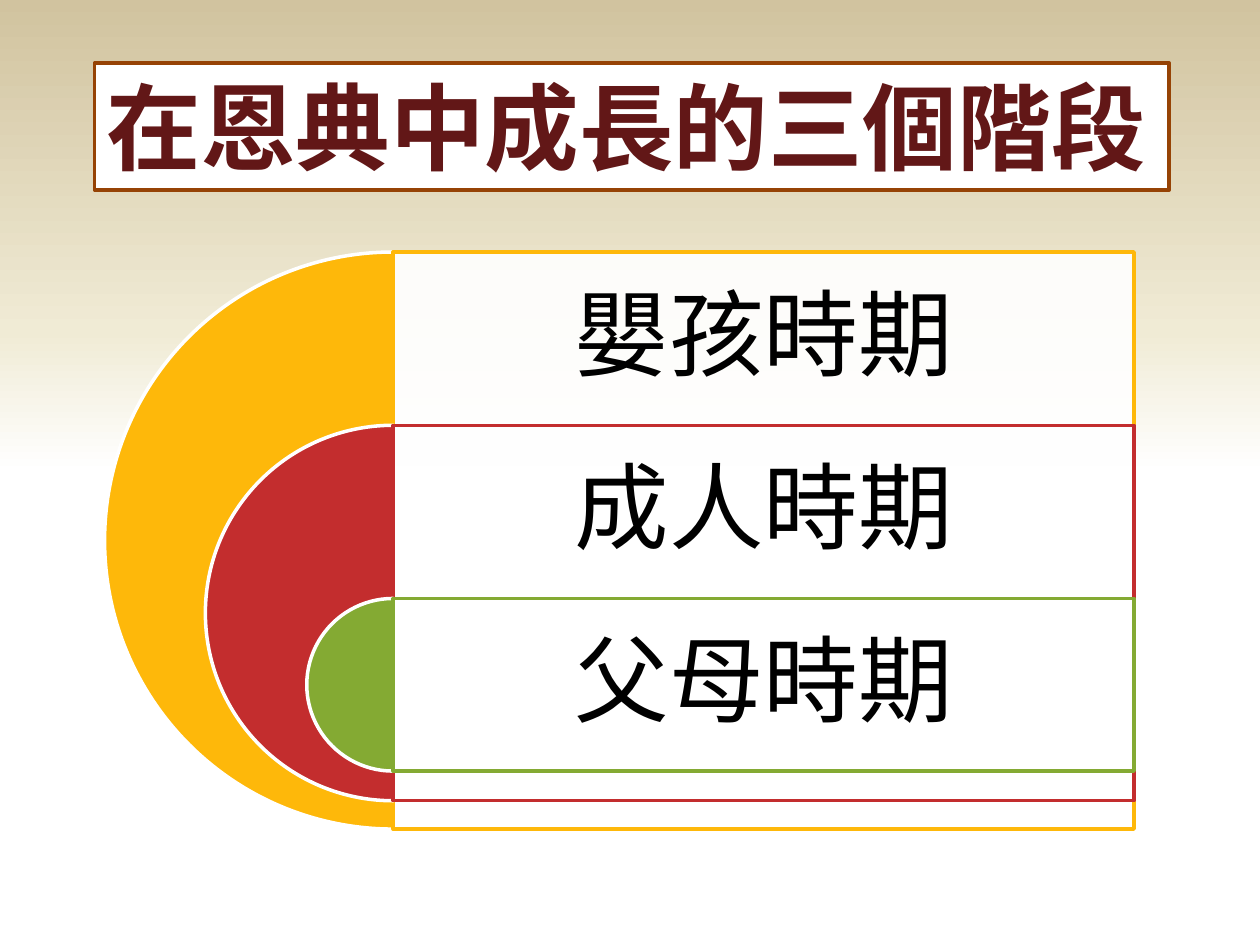
from copy import deepcopy

from lxml import etree
from pptx import Presentation
from pptx.dml.color import RGBColor
from pptx.enum.shapes import MSO_SHAPE
from pptx.enum.text import MSO_ANCHOR, MSO_AUTO_SIZE, PP_ALIGN
from pptx.oxml.ns import qn
from pptx.util import Inches, Pt

RECTANGLE = MSO_SHAPE.RECTANGLE
PIE = MSO_SHAPE.PIE
MIDDLE = MSO_ANCHOR.MIDDLE
CENTER = PP_ALIGN.CENTER
GROW = MSO_AUTO_SIZE.SHAPE_TO_FIT_TEXT

STAGES = [
    ("嬰孩時期", "FEB80A", 4.58),
    ("成人時期", "C32D2E", 2.98),
    ("父母時期", "84AA33", 1.37),
]
BACKGROUND_STOPS = [(0.5, "FFFFFF"), (0.65, "F0EBD5"), (1, "D1C39F")]
AXIS = 3.12
TOP = 2
ROW_HEIGHT = 1.375
PANEL_WIDTH = 5.88


def color(value):
    return RGBColor.from_string(value)


class SlideBuilder:
    latin_font = "Roboto"
    asian_font = "Noto Sans CJK SC"
    text_size = 54
    line_width = 2

    def __init__(self, page):
        self.page = page

    def background(self, stops):
        fill = self.page.background.fill
        fill.gradient()
        fill.gradient_angle = 90
        stop_list = next(self.page.element.iter(qn("a:gsLst")))
        stop_list.append(deepcopy(stop_list[-1]))
        for stop, (position, value) in zip(fill.gradient_stops, stops):
            stop.position = position
            stop.color.rgb = color(value)

    def shape(self, kind, left, top, width, height, fill, line):
        shape = self.page.shapes.add_shape(
            kind, Inches(left), Inches(top), Inches(width), Inches(height))
        shape.shadow.inherit = False
        shape.fill.solid()
        shape.fill.fore_color.rgb = color(fill)
        shape.line.color.rgb = color(line)
        shape.line.width = Pt(self.line_width)
        return shape

    def half_disc(self, center, top, size, fill):
        disc = self.shape(PIE, center - size / 2, top, size, size, fill, "FFFFFF")
        disc.adjustments[0] = 54
        disc.adjustments[1] = 162

    def panel(self, left, top, width, height, line):
        panel = self.shape(RECTANGLE, left, top, width, height, "FFFFFF", line)
        fill_color = panel.fill._xPr.find(qn("a:solidFill"))[0]
        etree.SubElement(fill_color, qn("a:alpha"), val="90000")

    def format_text(self, para, value, latin_font, bold=False):
        font = para.runs[0].font
        font.size = Pt(self.text_size)
        font.bold = bold
        font.name = latin_font
        font.color.rgb = color(value)
        etree.SubElement(font._element, qn("a:ea"), typeface=self.asian_font)

    def label(self, text, left, top, width, height):
        box = self.page.shapes.add_textbox(
            Inches(left), Inches(top), Inches(width), Inches(height))
        frame = box.text_frame
        frame.word_wrap = True
        frame.vertical_anchor = MIDDLE
        frame.margin_left = frame.margin_right = Inches(0.23)
        frame.margin_top = frame.margin_bottom = Inches(0.23)
        frame.text = text
        para = frame.paragraphs[0]
        para.alignment = CENTER
        para.line_spacing = 0.9
        para.space_after = Pt(19)
        self.format_text(para, "000000", self.latin_font)

    def title(self, text, left, top, width, height):
        box = self.page.shapes.add_textbox(
            Inches(left), Inches(top), Inches(width), Inches(height))
        box.fill.solid()
        box.fill.fore_color.rgb = color("FFFFFF")
        box.line.color.rgb = color("964305")
        box.line.width = Pt(self.line_width)
        frame = box.text_frame
        frame.word_wrap = False
        frame.auto_size = GROW
        frame.text = text
        self.format_text(frame.paragraphs[0], "621717", self.asian_font, True)


def main():
    deck = Presentation()
    deck.slide_width = Inches(10)
    deck.slide_height = Inches(7.5)
    page = deck.slides.add_slide(deck.slide_layouts[6])
    builder = SlideBuilder(page)
    builder.background(BACKGROUND_STOPS)
    for index, (name, accent, size) in enumerate(STAGES):
        top = TOP + index * ROW_HEIGHT
        builder.half_disc(AXIS, top, size, accent)
        builder.panel(AXIS, top, PANEL_WIDTH, size, accent)
        builder.label(name, AXIS, top, PANEL_WIDTH, ROW_HEIGHT)
    builder.title("在恩典中成長的三個階段", 0.75, 0.5, 8.53, 1.01)
    deck.save("out.pptx")


if __name__ == "__main__":
    main()
